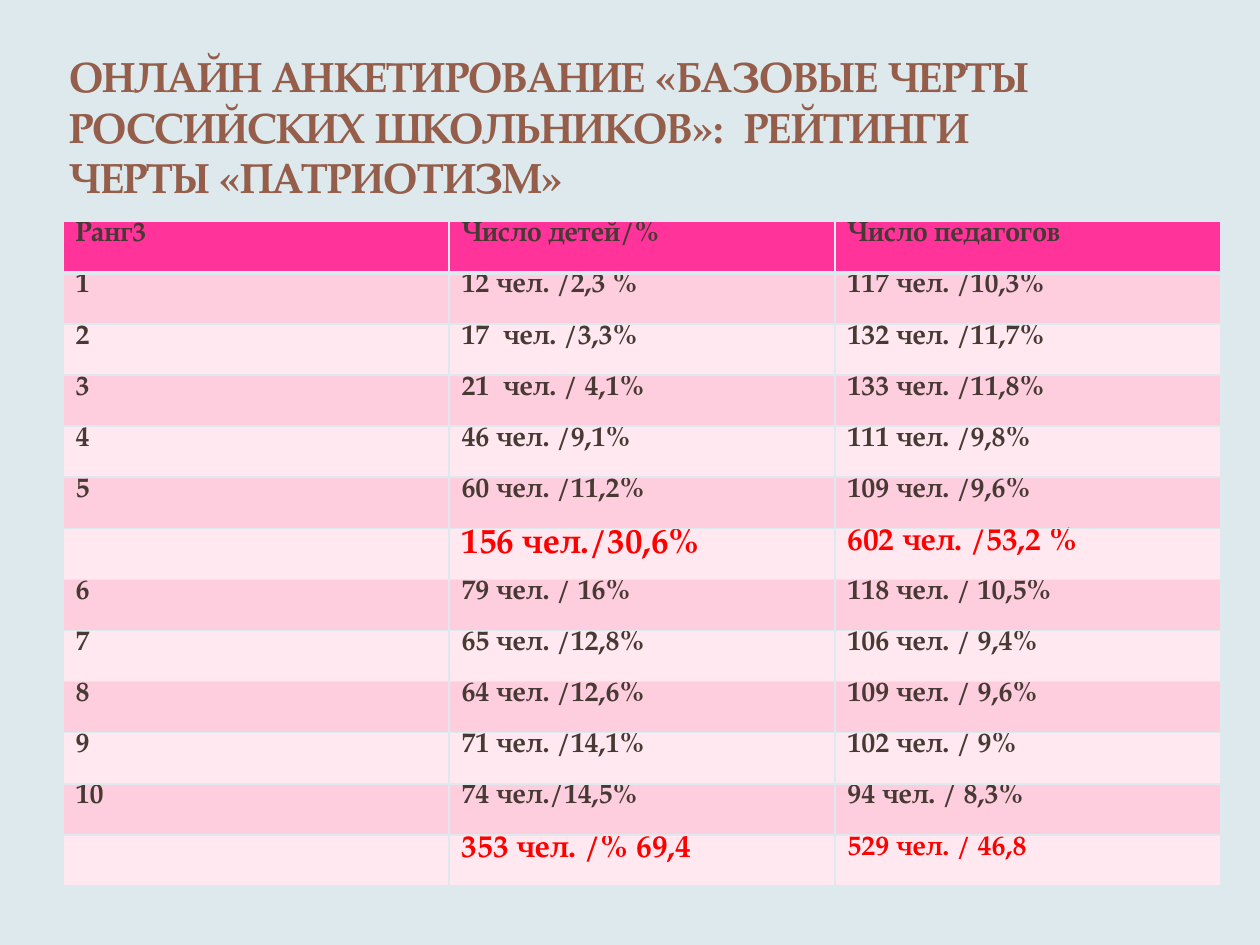
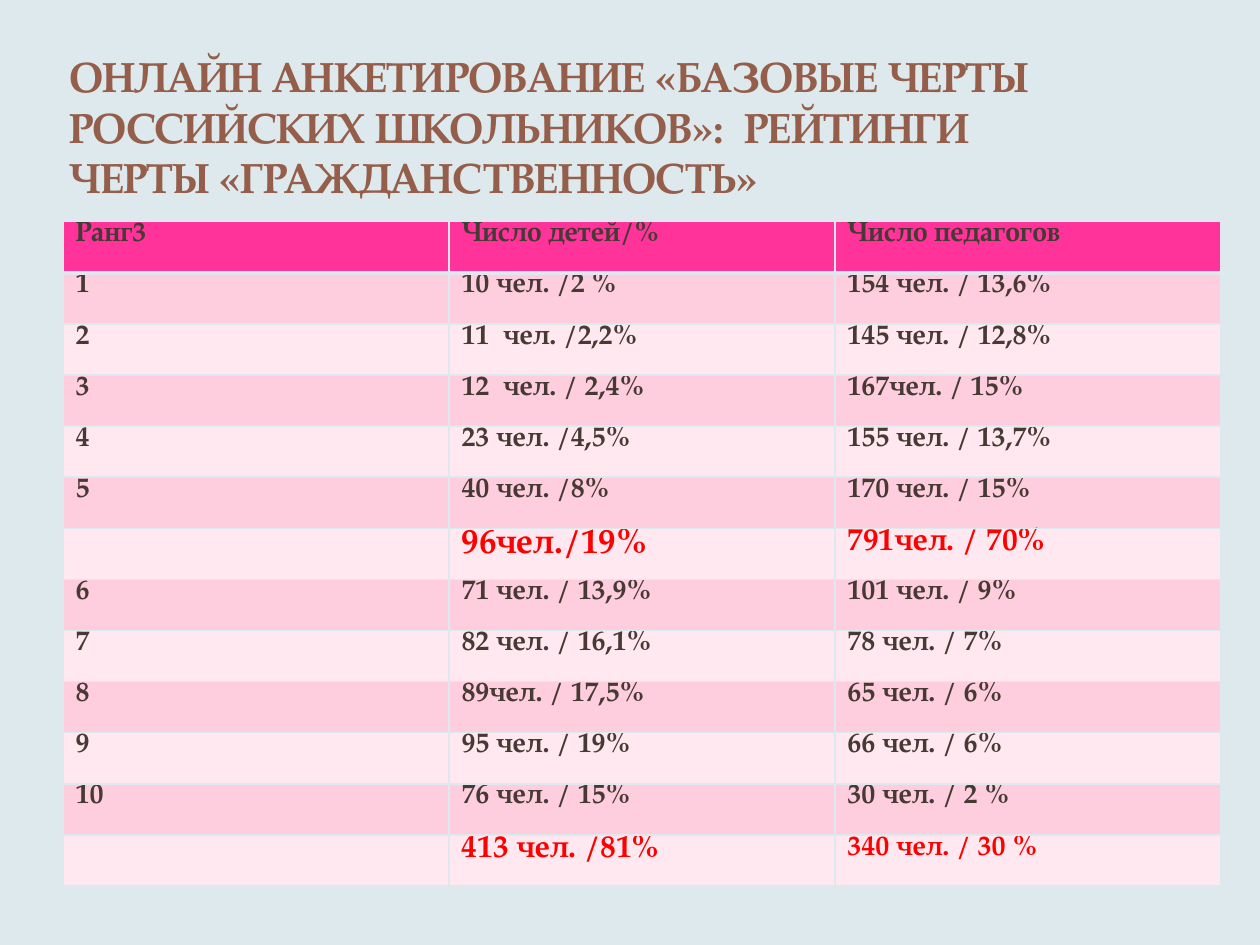
from lxml.etree import SubElement
from pptx import Presentation
from pptx.dml.color import RGBColor
from pptx.enum.text import MSO_ANCHOR as Anchor
from pptx.oxml.ns import qn
from pptx.util import Cm, Pt

# Content: (children, teachers) for ranks 1-5, their sum, ranks 6-10, their sum
TITLE = "ОНЛАЙН АНКЕТИРОВАНИЕ «БАЗОВЫЕ ЧЕРТЫ РОССИЙСКИХ ШКОЛЬНИКОВ»:  РЕЙТИНГИ ЧЕРТЫ «{}»"
HEADER = ("Ранг3", "Число детей/%", "Число педагогов")
RANKS = ["1", "2", "3", "4", "5", "", "6", "7", "8", "9", "10", ""]
RATINGS = {
    "ПАТРИОТИЗМ": [
        ("12 чел. /2,3 %", "117 чел. /10,3%"),
        ("17  чел. /3,3%", "132 чел. /11,7%"),
        ("21  чел. / 4,1%", "133 чел. /11,8%"),
        ("46 чел. /9,1%", "111 чел. /9,8%"),
        ("60 чел. /11,2%", "109 чел. /9,6%"),
        ("156 чел./30,6%", "602 чел. /53,2 %"),
        ("79 чел. / 16%", "118 чел. / 10,5%"),
        ("65 чел. /12,8%", "106 чел. / 9,4%"),
        ("64 чел. /12,6%", "109 чел. / 9,6%"),
        ("71 чел. /14,1%", "102 чел. / 9%"),
        ("74 чел./14,5%", "94 чел. / 8,3%"),
        ("353 чел. /% 69,4", "529 чел. / 46,8"),
    ],
    "ГРАЖДАНСТВЕННОСТЬ": [
        ("10 чел. /2 %", "154 чел. / 13,6%"),
        ("11  чел. /2,2%", "145 чел. / 12,8%"),
        ("12  чел. / 2,4%", "167чел. / 15%"),
        ("23 чел. /4,5%", "155 чел. / 13,7%"),
        ("40 чел. /8%", "170 чел. / 15%"),
        ("96чел./19%", "791чел. / 70%"),
        ("71 чел. / 13,9%", "101 чел. / 9%"),
        ("82 чел. / 16,1%", "78 чел. / 7%"),
        ("89чел. / 17,5%", "65 чел. / 6%"),
        ("95 чел. / 19%", "66 чел. / 6%"),
        ("76 чел. / 15%", "30 чел. / 2 %"),
        ("413 чел. /81%", "340 чел. / 30 %"),
    ],
}

# Shared look
FONT = "TeX Gyre Pagella"
BACK, TITLE_INK, INK, SUM_INK = "DDE9EC", "955E4B", "473A35", "FF0000"
HEAD_FILL, BANDS = "FF3399", ("FFE8EF", "FFCEDE")
SUM_SIZES = {6: (16, 20, 18), 12: (16, 18, 16)}  # table row: size by column
LEFT, ROW_H, COL_W = Cm(1.27), Cm(1.03), Cm(7.78)


def rgb(color):
    return RGBColor.from_string(color)


def write(tf, text, size=16, color=INK, bold=True):
    r = tf.paragraphs[0].add_run()
    r.text = text
    r.font.name, r.font.size, r.font.bold = FONT, Pt(size), bold
    r.font.color.rgb = rgb(color)


def add_borders(cell, **widths):
    """Draw the four borders, 1 pt unless a width is given for a side."""
    tcPr = cell._tc.get_or_add_tcPr()
    for i, side in enumerate("LRTB"):
        ln = SubElement(tcPr, qn("a:ln" + side), w=str(Pt(widths.get(side, 1))))
        fill = SubElement(ln, qn("a:solidFill"))
        SubElement(fill, qn("a:srgbClr"), val=BACK)
        tcPr.insert(i, ln)


def add_title(s, trait):
    tf = s.shapes.add_textbox(LEFT, Cm(0.89), Cm(20.12), Cm(3.18)).text_frame
    tf.word_wrap = True
    tf.vertical_anchor = Anchor.BOTTOM
    tf.margin_left = tf.margin_right = Cm(0.13)
    tf.margin_top = tf.margin_bottom = 0
    write(tf, TITLE.format(trait), size=24, color=TITLE_INK)


def add_ratings(s, counts):
    rows = [HEADER] + [(rank, *pair) for rank, pair in zip(RANKS, counts)]
    table = s.shapes.add_table(len(rows), len(HEADER), LEFT, Cm(4.47),
                               COL_W * len(HEADER), ROW_H * len(rows)).table
    for column in table.columns:
        column.width = COL_W
    for i, row in enumerate(rows):
        table.rows[i].height = ROW_H
        for j, text in enumerate(row):
            cell = table.cell(i, j)
            cell.margin_top = cell.margin_bottom = 0
            cell.fill.solid()
            cell.fill.fore_color.rgb = rgb(BANDS[i % 2] if i else HEAD_FILL)
            add_borders(cell, B=1 if i else 3, T=3 if i == 1 else 1)
            if text and i in SUM_SIZES:
                write(cell.text_frame, text, size=SUM_SIZES[i][j], color=SUM_INK)
            elif text:
                write(cell.text_frame, text)


def main():
    prs = Presentation()
    prs.slide_width, prs.slide_height = Cm(25.4), Cm(19.05)
    for trait, counts in RATINGS.items():
        s = prs.slides.add_slide(prs.slide_layouts[6])
        s.background.fill.solid()
        s.background.fill.fore_color.rgb = rgb(BACK)
        add_title(s, trait)
        add_ratings(s, counts)
    prs.save("out.pptx")


if __name__ == "__main__":
    main()
